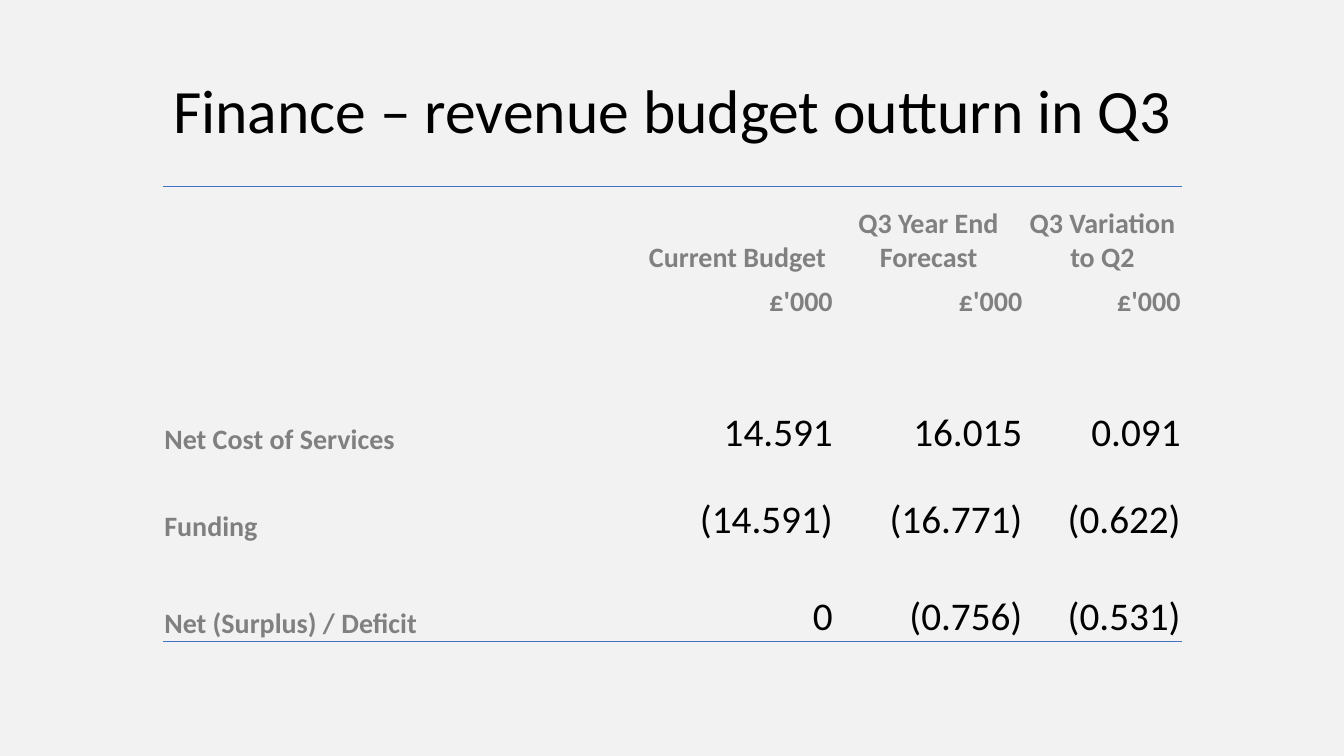
from dataclasses import dataclass

from lxml import etree
from pptx import Presentation
from pptx.dml.color import RGBColor
from pptx.enum.text import MSO_ANCHOR, PP_ALIGN
from pptx.oxml.ns import qn
from pptx.util import Inches, Pt

LEFT, MID, RIGHT = PP_ALIGN.LEFT, PP_ALIGN.CENTER, PP_ALIGN.RIGHT
BOTTOM, MIDDLE = MSO_ANCHOR.BOTTOM, MSO_ANCHOR.MIDDLE
FONT = "Calibri"
COLORS = {"back": "F2F2F2", "ink": "000000", "label": "808080", "line": "4472C4"}
PLAIN_GRID = "{2D5ABB26-0587-4C30-8999-92F81FD0307C}"
WIDTHS = (4.74, 1.91, 1.88, 1.57)
HEIGHTS = (0.88, 0.44, 0.44, 0.44, 0.48, 0.86, 0.48, 0.49)


@dataclass(frozen=True)
class Style:
    size: int
    bold: bool
    color: str


@dataclass(frozen=True)
class Row:
    index: int
    texts: tuple
    style: Style
    align: int


TITLE = Style(44, False, "ink")
LABEL = Style(20, True, "label")
VALUE = Style(28, False, "ink")
ROWS = (
    Row(0, ("", "Current Budget", "Q3 Year End Forecast", "Q3 Variation to Q2"), LABEL, MID),
    Row(1, ("",) + ("£'000",) * 3, LABEL, RIGHT),
    Row(4, ("Net Cost of Services", "14.591", "16.015", "0.091"), VALUE, RIGHT),
    Row(5, ("Funding", "(14.591)", "(16.771)", "(0.622)"), VALUE, RIGHT),
    Row(7, ("Net (Surplus) / Deficit", "0", "(0.756)", "(0.531)"), VALUE, RIGHT),
)


def apply(target, values: dict) -> None:
    """Set each named attribute on the target."""
    for name, value in values.items():
        setattr(target, name, value)


def write(frame, text: str, style: Style, align: int) -> None:
    """Put one styled paragraph into a text frame."""
    para = frame.paragraphs[0]
    para.alignment = align
    run = para.add_run()
    run.text = text
    apply(run.font, {"name": FONT, "size": Pt(style.size), "bold": style.bold})
    run.font.color.rgb = RGBColor.from_string(COLORS[style.color])


def rule(cell, side: str) -> None:
    """Draw a thin line along one side of a cell."""
    line = etree.Element(qn(f"a:ln{side}"), w=str(Pt(1)))
    fill = etree.SubElement(line, qn("a:solidFill"))
    etree.SubElement(fill, qn("a:srgbClr"), val=COLORS["line"])
    cell._tc.get_or_add_tcPr().insert(0, line)


def add_title(slide) -> None:
    """Place and fill the title."""
    title = slide.shapes.title
    apply(title, {"left": Inches(0.92), "top": Inches(0.4),
                  "width": Inches(11.5), "height": Inches(1.45)})
    frame = title.text_frame
    apply(frame, {"vertical_anchor": MIDDLE, "word_wrap": True})
    write(frame, "Finance – revenue budget outturn in Q3", TITLE, MID)
    frame.paragraphs[0].line_spacing = 0.9


def add_budget(slide) -> None:
    """Build the budget table."""
    shape = slide.shapes.add_table(len(HEIGHTS), len(WIDTHS), Inches(1.62), Inches(1.85),
                                   Inches(sum(WIDTHS)), Inches(sum(HEIGHTS)))
    table = shape.table
    apply(table, {"first_row": False, "horz_banding": False})
    table._tbl.tblPr.find(qn("a:tableStyleId")).text = PLAIN_GRID
    for column, width in zip(table.columns, WIDTHS):
        column.width = Inches(width)
    for row, height in zip(table.rows, HEIGHTS):
        row.height = Inches(height)
    edge = Inches(0.01)
    for cell in table.iter_cells():
        apply(cell, {"margin_left": edge, "margin_right": edge, "margin_top": edge,
                     "margin_bottom": 0, "vertical_anchor": BOTTOM})
        cell.fill.background()
    for row in ROWS:
        for place, text in enumerate(row.texts):
            if text:
                style, align = (row.style, row.align) if place else (LABEL, LEFT)
                write(table.cell(row.index, place).text_frame, text, style, align)
    for place in range(len(WIDTHS)):
        rule(table.cell(0, place), "T")
        rule(table.cell(len(HEIGHTS) - 1, place), "B")


def main() -> None:
    """Build and save the slide."""
    deck = Presentation()
    apply(deck, {"slide_width": Inches(13.33), "slide_height": Inches(7.5)})
    slide = deck.slides.add_slide(deck.slide_layouts[5])
    fill = slide.background.fill
    fill.solid()
    fill.fore_color.rgb = RGBColor.from_string(COLORS["back"])
    add_title(slide)
    add_budget(slide)
    deck.save("out.pptx")


if __name__ == "__main__":
    main()
